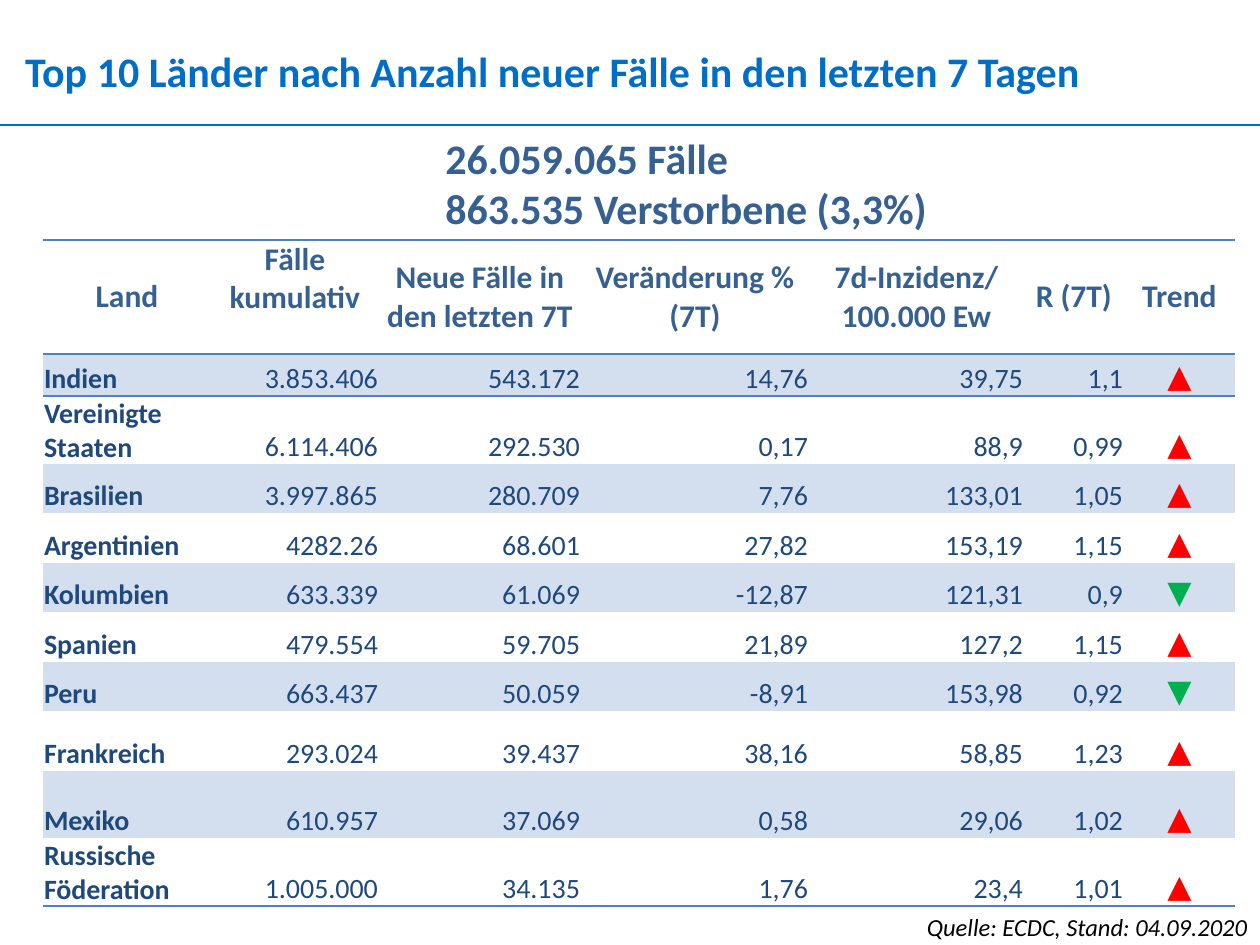
from lxml.etree import SubElement
from pptx import Presentation
from pptx.dml.color import RGBColor
from pptx.enum.shapes import MSO_CONNECTOR
from pptx.enum.text import MSO_ANCHOR as Anchor, MSO_AUTO_SIZE as Fit, PP_ALIGN as Align
from pptx.oxml.ns import qn
from pptx.util import Emu, Pt

FONT = "Calibri"
BLUE, HEAD, BODY = "006EC7", "366092", "1F497D"
RULE, BAND = "4F81BD", "D3DFEE"
UP, DOWN = "▲", "▼"
TREND = {UP: "FF0000", DOWN: "00B050"}
NO_STYLE = "{2D5ABB26-0587-4C30-8999-92F81FD0307C}"

COLS = [168, 168, 202, 228, 215, 100, 111]
HEIGHTS = [114, 42, 68, 49, 50, 49, 50, 49, 60, 67, 68]
HEADS = ["Land", "Fälle kumulativ", "Neue Fälle in den letzten 7T",
         "Veränderung % (7T)", "7d-Inzidenz/ 100.000 Ew", "R (7T)", "Trend"]
ROWS = [
    ["Indien", "3.853.406", "543.172", "14,76", "39,75", "1,1", UP],
    ["Vereinigte Staaten", "6.114.406", "292.530", "0,17", "88,9", "0,99", UP],
    ["Brasilien", "3.997.865", "280.709", "7,76", "133,01", "1,05", UP],
    ["Argentinien", "4282.26", "68.601", "27,82", "153,19", "1,15", UP],
    ["Kolumbien", "633.339", "61.069", "-12,87", "121,31", "0,9", DOWN],
    ["Spanien", "479.554", "59.705", "21,89", "127,2", "1,15", UP],
    ["Peru", "663.437", "50.059", "-8,91", "153,98", "0,92", DOWN],
    ["Frankreich", "293.024", "39.437", "38,16", "58,85", "1,23", UP],
    ["Mexiko", "610.957", "37.069", "0,58", "29,06", "1,02", UP],
    ["Russische Föderation", "1.005.000", "34.135", "1,76", "23,4", "1,01", UP],
]


def px(n):
    return Emu(round(n * 914400 / 126))


def rgb(code):
    return RGBColor.from_string(code)


def write(frame, text, size, color, bold=False, italic=False, align=Align.LEFT):
    frame.text = text
    for para in frame.paragraphs:
        para.alignment = align
        for run in para.runs:
            font = run.font
            font.name, font.size = FONT, Pt(size)
            font.bold, font.italic = bold, italic
            font.color.rgb = rgb(color)


def inset(item, left, top, right, bottom):
    """Set the margins of a cell or text frame."""
    item.margin_left, item.margin_top = px(left), px(top)
    item.margin_right, item.margin_bottom = px(right), px(bottom)


def add_title(slide, text):
    title = slide.shapes.title
    title.left, title.top, title.width, title.height = map(px, (25, 45, 1213, 50))
    frame = title.text_frame
    inset(frame, 0, 0, 0, 0)
    frame.vertical_anchor = Anchor.TOP
    frame.auto_size = Fit.NONE
    frame.word_wrap = True
    write(frame, text, 24, BLUE, bold=True)


def add_rule(slide, y):
    line = slide.shapes.add_connector(MSO_CONNECTOR.STRAIGHT, 0, px(y), px(1260), px(y))
    line.line.color.rgb = rgb(BLUE)
    line.line.width = Pt(1.5)
    SubElement(line._element.spPr, qn("a:effectLst"))


def add_text(slide, box, text, size, color, wrap=True, **style):
    frame = slide.shapes.add_textbox(*map(px, box)).text_frame
    frame.word_wrap = wrap
    write(frame, text, size, color, **style)


def add_edge(cell, tag):
    edge = SubElement(cell._tc.get_or_add_tcPr(), qn(tag), w=str(Pt(1)))
    fill = SubElement(edge, qn("a:solidFill"))
    SubElement(fill, qn("a:srgbClr"), val=RULE)


def fill_head(cell, text):
    cell.vertical_anchor = Anchor.MIDDLE
    inset(cell, 7, 0, 7, 0)
    write(cell.text_frame, text, 18, HEAD, bold=True, align=Align.CENTER)
    add_edge(cell, "a:lnT")
    add_edge(cell, "a:lnB")
    cell.fill.background()


def fill_body(cell, text, row, col):
    cell.vertical_anchor = Anchor.BOTTOM
    inset(cell, 1, 1, 1, 0)
    if text in TREND:
        write(cell.text_frame, text, 18, TREND[text], align=Align.CENTER)
    else:
        side = Align.RIGHT if col else Align.LEFT
        write(cell.text_frame, text, 16, BODY, bold=col == 0, align=side)
    if row == 1:
        add_edge(cell, "a:lnT")
    if row == len(ROWS):
        add_edge(cell, "a:lnB")
    if row % 2:
        cell.fill.solid()
        cell.fill.fore_color.rgb = rgb(BAND)
    else:
        cell.fill.background()


def add_grid(slide):
    box = map(px, (43, 240, sum(COLS), sum(HEIGHTS)))
    table = slide.shapes.add_table(len(HEIGHTS), len(COLS), *box).table
    table._tbl.tblPr.find(qn("a:tableStyleId")).text = NO_STYLE
    table.first_row = table.horz_banding = False
    for col, width in zip(table.columns, COLS):
        col.width = px(width)
    for row, height in zip(table.rows, HEIGHTS):
        row.height = px(height)
    for c, text in enumerate(HEADS):
        fill_head(table.cell(0, c), text)
    table.cell(0, 1).margin_bottom = px(38)  # lifts this heading by half a line
    for r, values in enumerate(ROWS, 1):
        for c, text in enumerate(values):
            fill_body(table.cell(r, c), text, r, c)


def main():
    deck = Presentation()
    deck.slide_width, deck.slide_height = px(1260), px(945)
    slide = deck.slides.add_slide(deck.slide_layouts[5])
    add_title(slide, "Top 10 Länder nach Anzahl neuer Fälle in den letzten 7 Tagen")
    add_rule(slide, 125)
    add_text(slide, (433, 126, 512, 115), "26.059.065 Fälle\n863.535 Verstorbene (3,3%)",
             24, HEAD, wrap=False, bold=True)
    add_text(slide, (814, 906, 446, 43), "Quelle: ECDC, Stand: 04.09.2020",
             14, "000000", italic=True, align=Align.RIGHT)
    add_grid(slide)
    deck.save("out.pptx")


if __name__ == "__main__":
    main()
